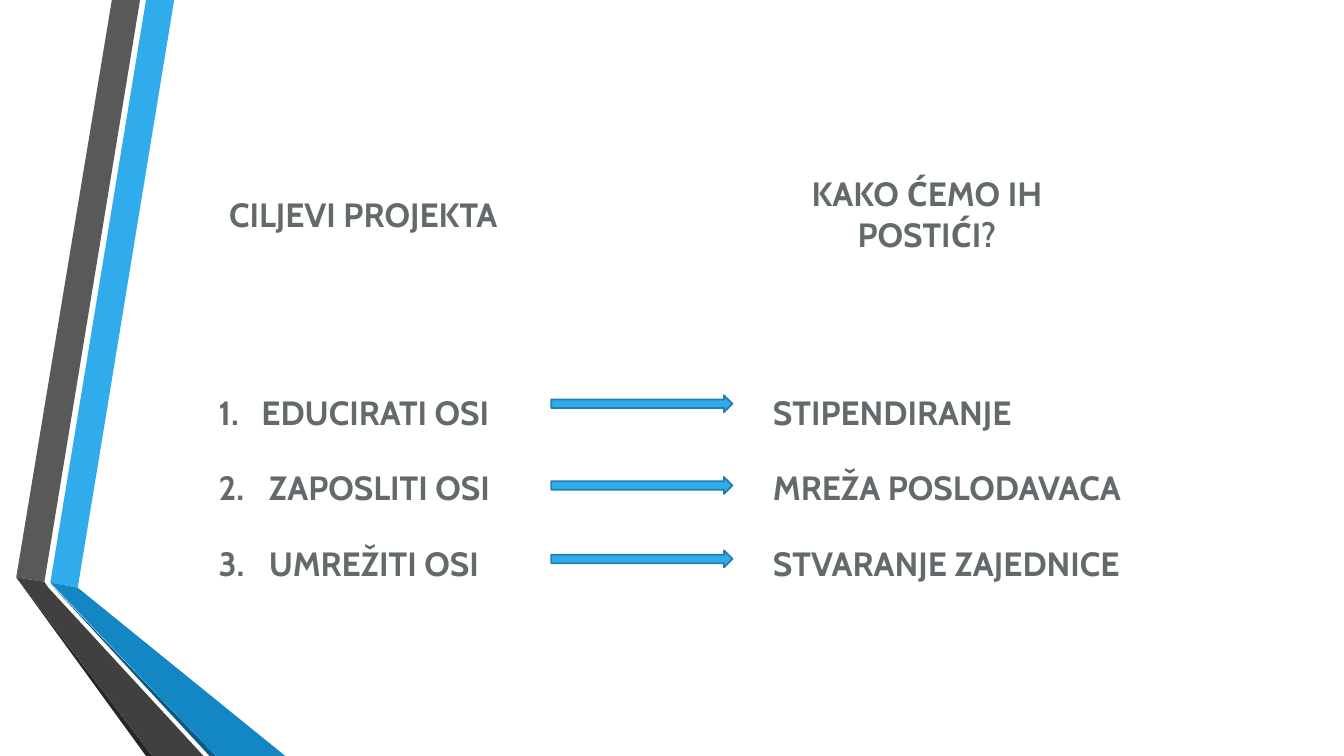
from dataclasses import dataclass

from lxml.etree import SubElement
from pptx import Presentation
from pptx.dml.color import RGBColor
from pptx.enum.shapes import MSO_SHAPE as Shape
from pptx.enum.text import MSO_ANCHOR as Anchor, PP_ALIGN as Align
from pptx.oxml.ns import qn
from pptx.util import Cm, Pt

FONT = "Cabin"
TEXT_GREY = RGBColor(0x63, 0x6A, 0x6C)
WHITE = RGBColor(0xFF, 0xFF, 0xFF)
BLUE = RGBColor(0x30, 0xAC, 0xEC)
ARROW_EDGE = RGBColor(0x24, 0x7F, 0xAF)
MID_BLUE = RGBColor(0x12, 0x87, 0xC3)
DEEP_BLUE = RGBColor(0x0C, 0x5A, 0x82)
GREY = RGBColor(0x59, 0x59, 0x59)
DARK_GREY = RGBColor(0x40, 0x40, 0x40)
NEAR_BLACK = RGBColor(0x26, 0x26, 0x26)

# Ribbon outlines in hundredths of a centimetre, from back to front
RIBBONS = [
    (BLUE, [(127, 1468), (196, 1481), (439, 0), (368, 0)]),
    (GREY, [(353, 0), (282, 0), (41, 1455), (112, 1466)]),
    (NEAR_BLACK, [(41, 1455), (368, 1905), (384, 1905)]),
    (DEEP_BLUE, [(127, 1471), (528, 1905), (544, 1905)]),
    (MID_BLUE, [(127, 1468), (544, 1905), (719, 1905), (196, 1481)]),
    (DARK_GREY, [(513, 1905), (122, 1481), (112, 1466), (41, 1455), (384, 1905)]),
]

# Number, goal, means, indent of the goal in cm
GOALS = [
    ("1.", "EDUCIRATI OSI", "STIPENDIRANJE", 1.08),
    ("2.", "ZAPOSLITI OSI", "MREŽA POSLODAVACA", 1.27),
    ("3.", "UMREŽITI OSI", "STVARANJE ZAJEDNICE", 1.27),
]
MEANS_INDENT = 13.97
ARROW_TOPS = [0, 2.06, 3.91]


@dataclass
class Box:
    """A region of the page, in centimetres."""
    left: float
    top: float
    width: float
    height: float

    def lengths(self):
        return Cm(self.left), Cm(self.top), Cm(self.width), Cm(self.height)


def set_font(para):
    para.font.name = FONT
    para.font.size = Pt(24)
    para.font.bold = True
    para.font.color.rgb = TEXT_GREY


def paint(shape, color):
    shape.shadow.inherit = False
    shape.fill.solid()
    shape.fill.fore_color.rgb = color
    shape.line.fill.background()


def add_ribbons(page, box):
    for color, points in RIBBONS:
        builder = page.shapes.build_freeform(*points[0], scale=Cm(0.01))
        builder.add_line_segments(points[1:], close=True)
        paint(builder.convert_to_shape(Cm(box.left), Cm(box.top)), color)


def add_heading(page, box, words):
    heading = page.shapes.add_shape(Shape.ROUNDED_RECTANGLE, *box.lengths())
    paint(heading, WHITE)
    frame = heading.text_frame
    frame.word_wrap = True
    frame.vertical_anchor = Anchor.MIDDLE
    para = frame.paragraphs[0]
    para.text = words
    para.alignment = Align.CENTER
    set_font(para)


def set_tab_stops(para, stops):
    tab_list = SubElement(para._p.get_or_add_pPr(), qn("a:tabLst"))
    for stop in stops:
        SubElement(tab_list, qn("a:tab"), pos=str(Cm(stop)), algn="l")


def add_goals(page, box):
    """One line per goal; tab stops align the goals and their means."""
    frame = page.shapes.add_textbox(*box.lengths()).text_frame
    frame.word_wrap = True
    frame.vertical_anchor = Anchor.MIDDLE
    for index, (number, goal, means, indent) in enumerate(GOALS):
        para = frame.add_paragraph() if index else frame.paragraphs[0]
        para.text = f"{number}\t{goal}\t{means}"
        para.line_spacing = 1.5
        para.space_before = Pt(4.8)
        para.space_after = Pt(6)
        set_tab_stops(para, [indent, MEANS_INDENT])
        set_font(para)


def add_arrows(page, box):
    for top in ARROW_TOPS:
        place = Box(box.left, box.top + top, box.width, 0.43)
        arrow = page.shapes.add_shape(Shape.RIGHT_ARROW, *place.lengths())
        paint(arrow, BLUE)
        arrow.line.color.rgb = ARROW_EDGE
        arrow.line.width = Pt(1.25)


def main():
    deck = Presentation()
    deck.slide_width, deck.slide_height = Cm(33.87), Cm(19.05)
    page = deck.slides.add_slide(deck.slide_layouts[6])
    add_ribbons(page, Box(0, 0, 7.19, 19.05))
    add_goals(page, Box(5.26, 5.54, 28.6, 12.98))
    add_heading(page, Box(4.42, 3.53, 9.47, 3.71), "CILJEVI PROJEKTA")
    add_heading(page, Box(18.47, 3.53, 9.78, 3.71), "KAKO ĆEMO IH POSTIĆI?")
    add_arrows(page, Box(13.89, 9.96, 4.57, 4.34))
    deck.save("out.pptx")


if __name__ == "__main__":
    main()
